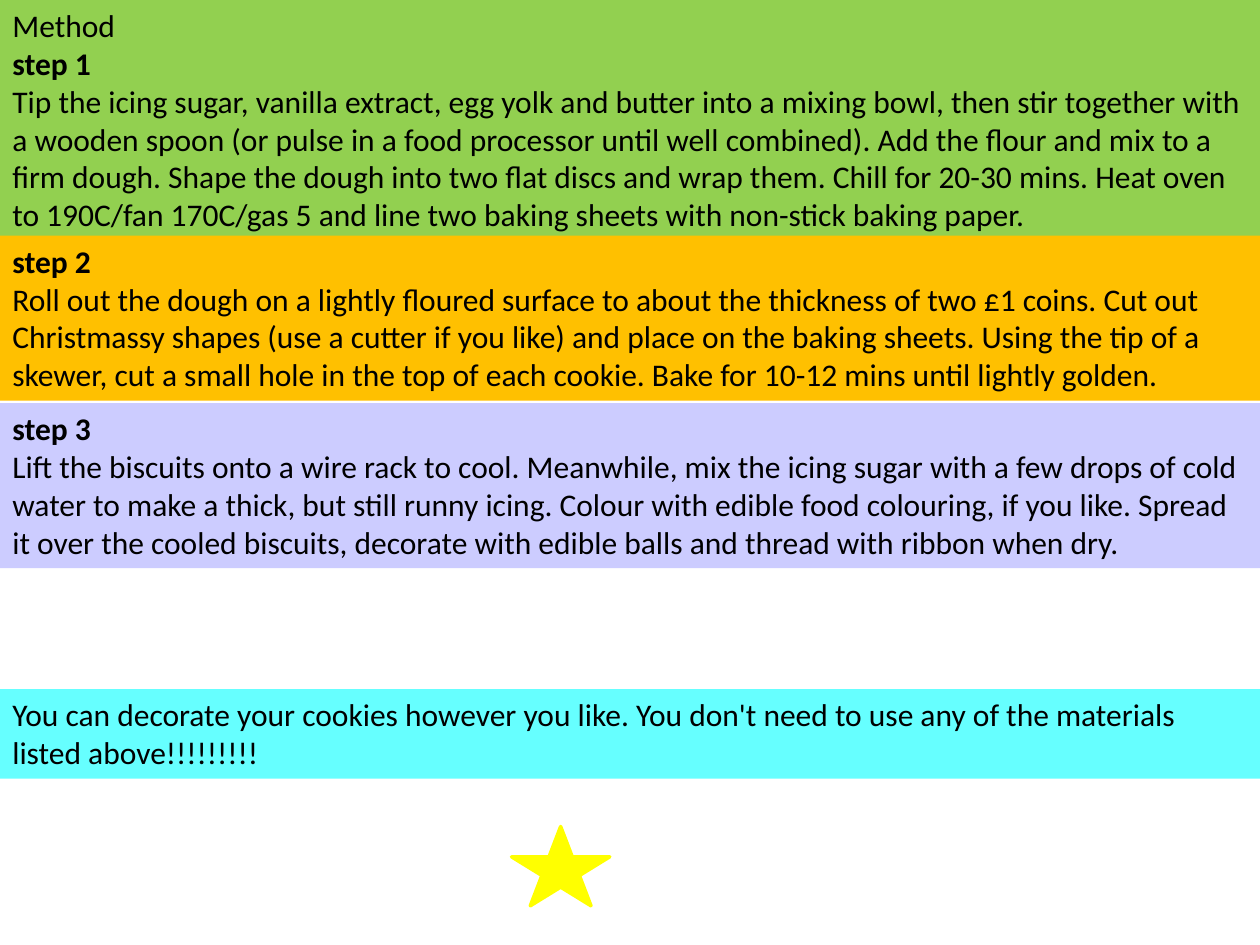
from pptx import Presentation
from pptx.dml.color import RGBColor
from pptx.enum.shapes import MSO_SHAPE as Shape
from pptx.enum.text import MSO_AUTO_SIZE as AutoSize
from pptx.util import Pt

SLIDE_WIDTH, SLIDE_HEIGHT = 720, 540
FONT = "Calibri"
COLORS = {
    "text": "000000",
    "step 1": "92D050",
    "step 2": "FFC000",
    "step 3": "CCCCFF",
    "tip": "66FFFF",
    "star": "FFFF00",
}

STEP_1 = (
    "Tip the icing sugar, vanilla extract, egg yolk and butter into a mixing bowl, "
    "then stir together with a wooden spoon (or pulse in a food processor until well "
    "combined). Add the flour and mix to a firm dough. Shape the dough into two flat "
    "discs and wrap them. Chill for 20-30 mins. Heat oven to 190C/fan 170C/gas 5 and "
    "line two baking sheets with non-stick baking paper."
)
STEP_2 = (
    "Roll out the dough on a lightly floured surface to about the thickness of two £1 "
    "coins. Cut out Christmassy shapes (use a cutter if you like) and place on the "
    "baking sheets. Using the tip of a skewer, cut a small hole in the top of each "
    "cookie. Bake for 10-12 mins until lightly golden."
)
STEP_3 = (
    "Lift the biscuits onto a wire rack to cool. Meanwhile, mix the icing sugar with a "
    "few drops of cold water to make a thick, but still runny icing. Colour with edible "
    "food colouring, if you like. Spread it over the cooled biscuits, decorate with "
    "edible balls and thread with ribbon when dry."
)
TIP = (
    "You can decorate your cookies however you like. You don't need to use any of the "
    "materials listed above!!!!!!!!!"
)

# Colour key, top, height, lines of text; a line equal to the key is a bold heading
BANDS = [
    ("step 1", 0, 138.24, ["Method", "step 1", STEP_1]),
    ("step 2", 134.64, 94.32, ["step 2", STEP_2]),
    ("step 3", 230.4, 94.32, ["step 3", STEP_3]),
    ("tip", 393.84, 51.12, [TIP]),
]


def color(key):
    return RGBColor.from_string(COLORS[key])


def write(paragraph, text, *, size=18, bold=False, ink="text"):
    run = paragraph.add_run()
    run.text = text
    run.font.name = FONT
    run.font.size = Pt(size)
    run.font.bold = bold
    run.font.color.rgb = color(ink)


def add_band(slide, key, top, height, lines):
    band = slide.shapes.add_textbox(0, Pt(top), Pt(SLIDE_WIDTH), Pt(height))
    band.fill.solid()
    band.fill.fore_color.rgb = color(key)
    frame = band.text_frame
    frame.word_wrap = True
    frame.auto_size = AutoSize.SHAPE_TO_FIT_TEXT
    for index, line in enumerate(lines):
        paragraph = frame.add_paragraph() if index else frame.paragraphs[0]
        write(paragraph, line, bold=line == key)


def add_star(slide, left, top, width, height):
    star = slide.shapes.add_shape(
        Shape.STAR_5_POINT, Pt(left), Pt(top), Pt(width), Pt(height)
    )
    star.shadow.inherit = False
    star.fill.solid()
    star.fill.fore_color.rgb = color("star")
    star.line.color.rgb = color("star")
    star.line.width = Pt(2)


def main():
    deck = Presentation()
    deck.slide_width, deck.slide_height = Pt(SLIDE_WIDTH), Pt(SLIDE_HEIGHT)
    slide = deck.slides.add_slide(deck.slide_layouts[6])

    # Method steps and decorating tip
    for band in BANDS:
        add_band(slide, *band)

    # Cookie star
    add_star(slide, 292.32, 472.32, 56.16, 45.36)

    deck.save("out.pptx")


if __name__ == "__main__":
    main()
